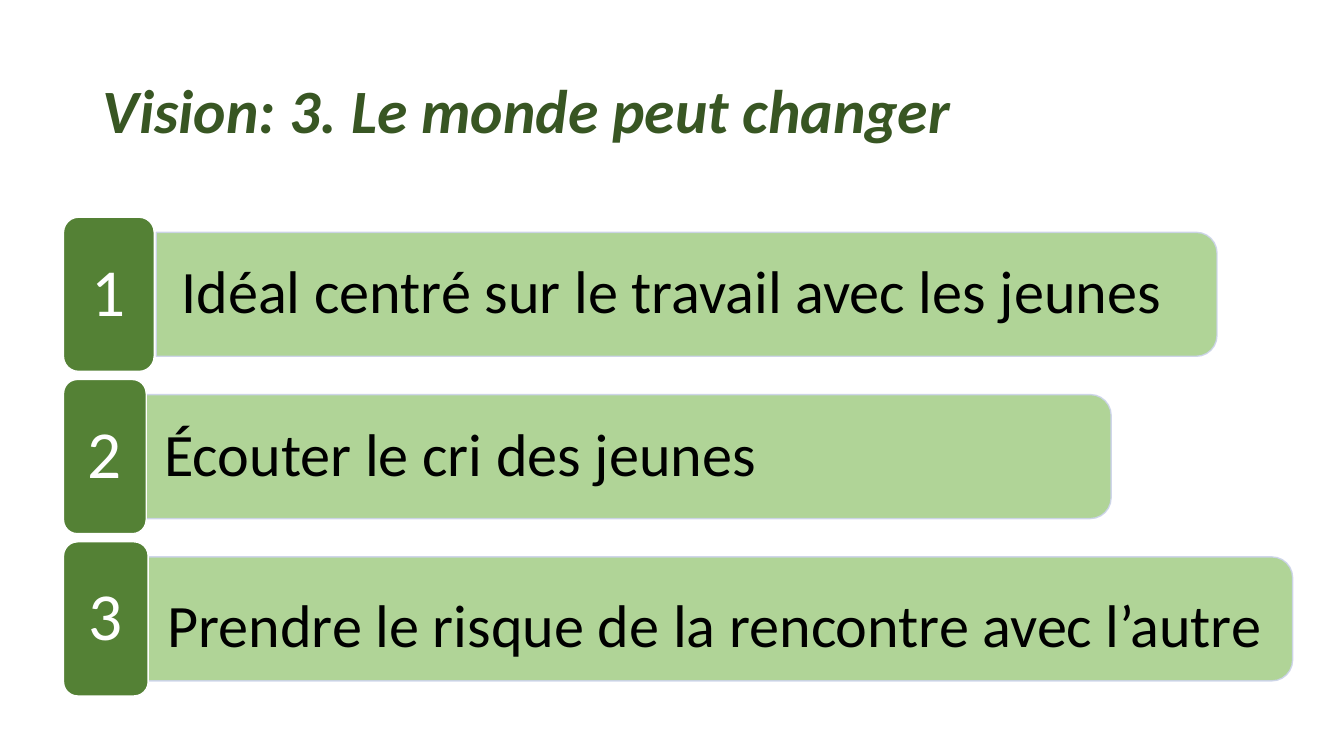
import pptx
import pptx.util
import pptx.dml.color
import pptx.enum.shapes
import pptx.enum.text
import pptx.oxml
import pptx.oxml.ns
from dataclasses import dataclass

# Content: badge width, bar left, bar length, text left, text drop (inches)
TITLE = "Vision: 3. Le monde peut changer"
POINTS = [
    ("Idéal centré sur le travail avec les jeunes", 0.9, 1.55, 10.52, 1.62, 0),
    ("Écouter le cri des jeunes", 0.82, 1.45, 9.57, 1.45, 0),
    ("Prendre le risque de la rencontre avec l’autre", 0.84, 1.47, 11.35, 1.48, 0.09),
]


@dataclass(frozen=True)
class Theme:
    font: str = "Calibri"
    title: str = "385623"
    badge: str = "548135"
    bar: str = "A8D08C"
    bar_line: str = "CCD3EA"
    white: str = "FFFFFF"
    black: str = "000000"
    title_size: int = 44
    point_size: int = 43
    number_size: int = 48
    bar_opacity: int = 90


THEME = Theme()

# Row grid, in inches
SLIDE_WIDTH, SLIDE_HEIGHT = 13.33, 7.5
FIRST_CENTRE, ROW_PITCH = 2.92, 1.61
BADGE_LEFT, BADGE_HEIGHT = 0.63, 1.53
BAR_HEIGHT, TEXT_HEIGHT = 1.23, 1.11
CORNER = 0.167

SHAPES = pptx.enum.shapes.MSO_SHAPE
ALIGN = pptx.enum.text.PP_ALIGN
inches = pptx.util.Inches


def color(value):
    return pptx.dml.color.RGBColor.from_string(value)


def write(shape, text, *, size, ink, margins=(0.1, 0.05), align=ALIGN.LEFT,
          bold=False, italic=False):
    frame = shape.text_frame
    frame.word_wrap = True
    frame.auto_size = pptx.enum.text.MSO_AUTO_SIZE.NONE
    frame.vertical_anchor = pptx.enum.text.MSO_ANCHOR.MIDDLE
    frame.margin_left = frame.margin_right = inches(margins[0])
    frame.margin_top = frame.margin_bottom = inches(margins[1])
    paragraph = frame.paragraphs[0]
    paragraph.alignment = align
    paragraph.line_spacing = 0.9
    run = paragraph.add_run()
    run.text = text
    run.font.name = THEME.font
    run.font.size = pptx.util.Pt(size)
    run.font.bold, run.font.italic = bold, italic
    run.font.color.rgb = color(ink)


def add_box(slide, kind, left, top, width, height, *, fill, line, corners, opacity=100):
    shape = slide.shapes.add_shape(kind, *map(inches, (left, top, width, height)))
    shape.shadow.inherit = False
    shape.fill.solid()
    shape.fill.fore_color.rgb = color(fill)
    shape.line.color.rgb = color(line)
    shape.line.width = pptx.util.Pt(1)
    for index, corner in enumerate(corners):
        shape.adjustments[index] = corner
    if opacity < 100:
        properties = shape.fill._xPr
        for tint in properties.iter(pptx.oxml.ns.qn("a:srgbClr")):
            alpha = pptx.oxml.parse_xml(
                f'<a:alpha {pptx.oxml.ns.nsdecls("a")} val="{opacity * 1000}"/>')
            tint.append(alpha)
    return shape


def add_point(slide, row, text, badge_width, bar_left, bar_length, text_left, text_drop):
    centre = FIRST_CENTRE + row * ROW_PITCH
    # Bar: an upright shape turned a quarter so its round end faces right
    bar = add_box(slide, SHAPES.ROUND_2_SAME_RECTANGLE,
                  bar_left + (bar_length - BAR_HEIGHT) / 2, centre - bar_length / 2,
                  BAR_HEIGHT, bar_length, fill=THEME.bar, line=THEME.bar_line,
                  corners=(CORNER, 0), opacity=THEME.bar_opacity)
    bar.rotation = 90
    # Wording
    label = slide.shapes.add_textbox(*map(inches, (
        text_left, centre + text_drop - TEXT_HEIGHT / 2, bar_length, TEXT_HEIGHT)))
    write(label, text, size=THEME.point_size, ink=THEME.black, margins=(0.18, 0.09))
    # Numbered badge
    badge = add_box(slide, SHAPES.ROUNDED_RECTANGLE, BADGE_LEFT, centre - BADGE_HEIGHT / 2,
                    badge_width, BADGE_HEIGHT, fill=THEME.badge, line=THEME.white,
                    corners=(CORNER,))
    write(badge, str(row + 1), size=THEME.number_size, ink=THEME.white,
          margins=(0.2, 0.1), align=ALIGN.CENTER)


def main():
    presentation = pptx.Presentation()
    presentation.slide_width = inches(SLIDE_WIDTH)
    presentation.slide_height = inches(SLIDE_HEIGHT)
    slide = presentation.slides.add_slide(presentation.slide_layouts[5])

    # Title
    title = slide.shapes.title
    title.left, title.top, title.width, title.height = map(inches, (0.92, 0.4, 11.5, 1.45))
    write(title, TITLE, size=THEME.title_size, ink=THEME.title, bold=True, italic=True)

    # Numbered points
    for row, point in enumerate(POINTS):
        add_point(slide, row, *point)

    presentation.save("out.pptx")


if __name__ == "__main__":
    main()
